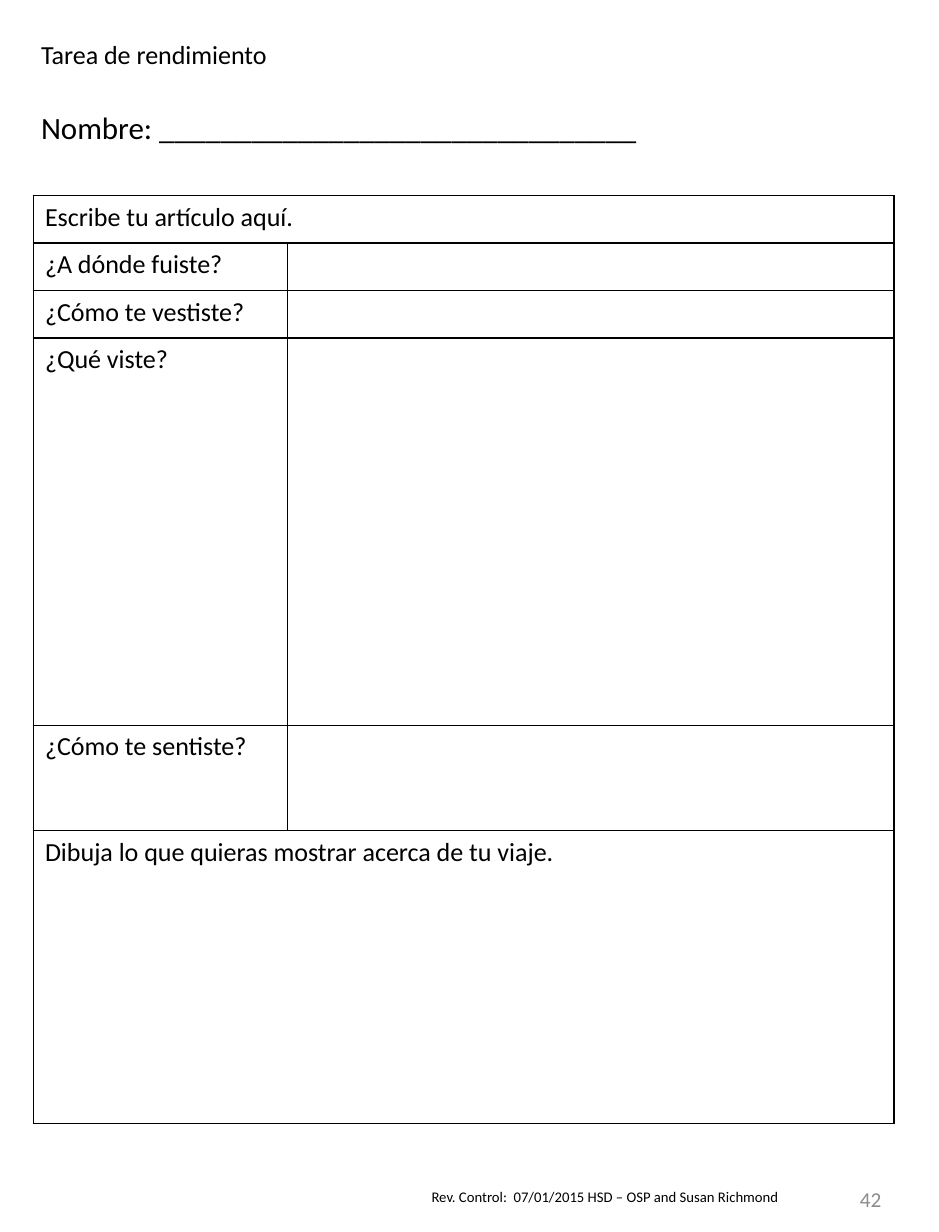
from lxml import etree
from pptx import Presentation
from pptx.dml.color import RGBColor
from pptx.enum.text import MSO_ANCHOR, PP_ALIGN
from pptx.oxml.ns import qn
from pptx.util import Cm, Pt

LEFT, RIGHT = PP_ALIGN.LEFT, PP_ALIGN.RIGHT
TOP, MIDDLE = MSO_ANCHOR.TOP, MSO_ANCHOR.MIDDLE
BLACK, GREY = "000000", "8C8C8C"
FONT = "Calibri"
BLANK_LAYOUT = 6

COLUMN_WIDTHS = (5.5, 13.13)
# Row height, prompt, whether the row spans both columns
ROWS = (
    (1.03, "Escribe tu artículo aquí.", True),
    (1.03, "¿A dónde fuiste?", False),
    (1.03, "¿Cómo te vestiste?", False),
    (8.38, "¿Qué viste?", False),
    (2.28, "¿Cómo te sentiste?", False),
    (6.34, "Dibuja lo que quieras mostrar acerca de tu viaje.", True),
)


def color(value):
    return RGBColor.from_string(value)


def write(text_frame, text, size, text_color=BLACK, align=LEFT):
    paragraph = text_frame.paragraphs[0]
    paragraph.alignment = align
    run = paragraph.add_run()
    run.text = text
    for name, value in {"name": FONT, "size": Pt(size)}.items():
        setattr(run.font, name, value)
    run.font.color.rgb = color(text_color)


def add_text(slide, box, text, size, text_color=BLACK, align=LEFT, anchor=TOP):
    shape = slide.shapes.add_textbox(*(Cm(length) for length in box))
    text_frame = shape.text_frame
    text_frame.word_wrap = True
    text_frame.vertical_anchor = anchor
    write(text_frame, text, size, text_color, align)
    return shape


def outline_cell(cell):
    """Give a cell no fill and a thin black line on every side."""
    cell.fill.background()
    properties = cell._tc.get_or_add_tcPr()
    for index, side in enumerate(("lnL", "lnR", "lnT", "lnB")):
        line = etree.Element(qn(f"a:{side}"), w=str(Pt(1)))
        fill = etree.SubElement(line, qn("a:solidFill"))
        etree.SubElement(fill, qn("a:srgbClr"), val=BLACK)
        properties.insert(index, line)


def add_heading(slide, box):
    left, top, width, height = box
    add_text(slide, (left, top, 6.35, 0.94), "Tarea de rendimiento", 16)
    add_text(slide, (left, top + 1.52, width, height - 1.52),
             "Nombre: " + "_" * 31, 19)


def add_article_table(slide, box):
    frame = slide.shapes.add_table(len(ROWS), len(COLUMN_WIDTHS),
                                   *(Cm(length) for length in box))
    table = frame.table
    for name in ("first_row", "horz_banding"):
        setattr(table, name, False)
    for column, width in zip(table.columns, COLUMN_WIDTHS):
        column.width = Cm(width)
    for index, (height, prompt, spans) in enumerate(ROWS):
        row = table.rows[index]
        row.height = Cm(height)
        for cell in row.cells:
            outline_cell(cell)
        first, last = row.cells
        if spans:
            first.merge(last)
        write(first.text_frame, prompt, 16)


def add_footer(slide, box):
    left, top, width, height = box
    add_text(slide, (left, top + 0.35, 10.16, 0.64),
             "Rev. Control:  07/01/2015 HSD – OSP and Susan Richmond", 9)
    number_width = 2.21
    number = add_text(slide,
                      (left + width - number_width, top, number_width, height),
                      "42", 13, GREY, RIGHT, MIDDLE)
    for name in ("margin_left", "margin_right"):
        setattr(number.text_frame, name, Cm(0.28))


def main():
    presentation = Presentation()
    presentation.slide_width = Cm(20.32)
    presentation.slide_height = Cm(26.67)
    slide = presentation.slides.add_slide(
        presentation.slide_layouts[BLANK_LAYOUT])

    # Footer, writing table, then the heading above it
    add_footer(slide, (9.09, 25.25, 10.26, 1.42))
    add_article_table(slide, (0.72, 4.23, sum(COLUMN_WIDTHS),
                              sum(row[0] for row in ROWS)))
    add_heading(slide, (0.64, 0.71, 14.17, 2.59))
    presentation.save("out.pptx")


if __name__ == "__main__":
    main()
